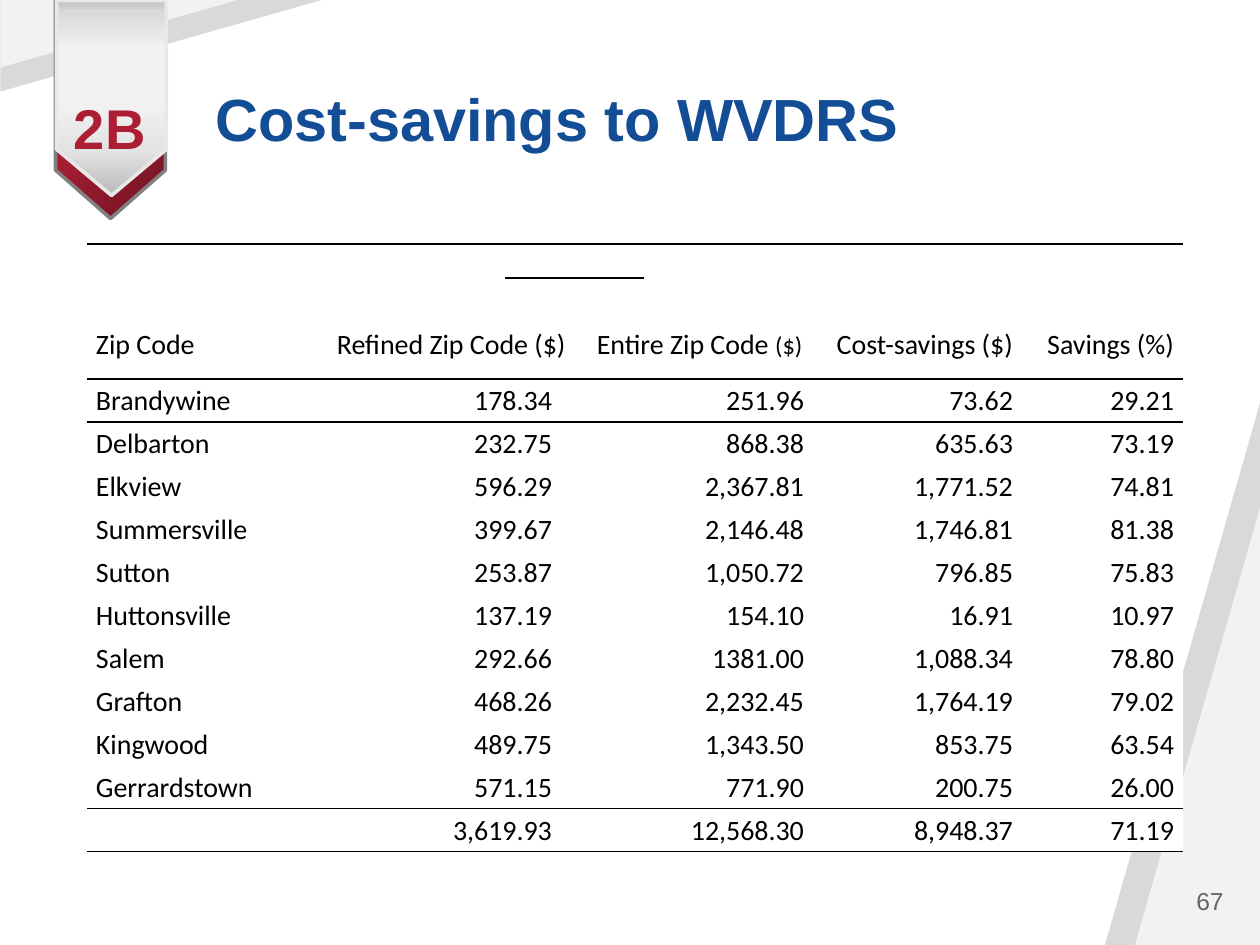
from lxml import etree
from pptx import Presentation
from pptx import util as u
from pptx.dml.color import RGBColor
from pptx.enum import shapes, text
from pptx.oxml import parse_xml
from pptx.oxml.ns import nsdecls, qn

PX = 914400 / 126
BLACK = RGBColor(0x00, 0x00, 0x00)
WHITE = RGBColor(0xFF, 0xFF, 0xFF)
SILVER = RGBColor(0xD9, 0xD9, 0xD9)
PALE = RGBColor(0xF2, 0xF2, 0xF2)
GRAY = RGBColor(0x80, 0x80, 0x80)
RIM = RGBColor(0xE8, 0xE8, 0xE8)
NUMBER_GRAY = RGBColor(0x64, 0x64, 0x64)
BLUE = RGBColor(0x12, 0x4D, 0x95)
RED = RGBColor(0xAC, 0x1E, 0x34)

RED_STOPS = [(0, "6A1320"), (48, "A61D33"), (100, "E25A6F")]
SILVER_STOPS = [(0, "BFBFBF"), (6, "D9D9D9"), (25, "F2F2F2"),
                (53, "F1F1F1"), (77, "E3E3E3"), (97, "BFBFBF")]
RADIAL = '<a:path path="circle"><a:fillToRect l="100000" t="100000"/></a:path>'
LINEAR = '<a:lin ang="0" scaled="0"/>'
PLAIN_TABLE = "{2D5ABB26-0587-4C30-8999-92F81FD0307C}"

COLUMNS = [238, 236, 252, 209, 161]
HEADER_HEIGHT, ROW_HEIGHT, CELL_INSET = 135, 43, 9
HEADERS = ["Zip Code", None, None, "Cost-savings ($)", "Savings (%)"]
ROWS = [
    ["Brandywine", "178.34", "251.96", "73.62", "29.21"],
    ["Delbarton", "232.75", "868.38", "635.63", "73.19"],
    ["Elkview", "596.29", "2,367.81", "1,771.52", "74.81"],
    ["Summersville", "399.67", "2,146.48", "1,746.81", "81.38"],
    ["Sutton", "253.87", "1,050.72", "796.85", "75.83"],
    ["Huttonsville", "137.19", "154.10", "16.91", "10.97"],
    ["Salem", "292.66", "1381.00", "1,088.34", "78.80"],
    ["Grafton", "468.26", "2,232.45", "1,764.19", "79.02"],
    ["Kingwood", "489.75", "1,343.50", "853.75", "63.54"],
    ["Gerrardstown", "571.15", "771.90", "200.75", "26.00"],
    [None, "3,619.93", "12,568.30", "8,948.37", "71.19"],
]


def px(*lengths):
    """Turn pixel lengths into EMU."""
    return [u.Emu(round(length * PX)) for length in lengths]


def add_wedge(page, place, color, turned=False):
    """Add a right-angled corner band, optionally turned to the top left."""
    wedge = page.shapes.add_shape(shapes.MSO_SHAPE.ISOSCELES_TRIANGLE, *px(*place))
    wedge.adjustments[0] = 1
    wedge.shadow.inherit = False
    wedge.fill.solid()
    wedge.fill.fore_color.rgb = color
    wedge.line.fill.background()
    if turned:
        wedge.rotation = 270
        wedge._element.spPr.find(qn("a:xfrm")).set("flipV", "1")


def add_ribbon(page, place, point, stops, direction, rim):
    """Add a downward ribbon with a gradient and a rim."""
    ribbon = page.shapes.add_shape(shapes.MSO_SHAPE.PENTAGON, *px(*place))
    ribbon.rotation = 90
    ribbon.adjustments[0] = point
    ribbon.shadow.inherit = False
    ribbon.line.color.rgb = rim
    ribbon.line.width = u.Pt(2)
    marks = "".join(f'<a:gs pos="{at * 1000}"><a:srgbClr val="{color}"/></a:gs>'
                    for at, color in stops)
    gradient = parse_xml(f'<a:gradFill {nsdecls("a")} rotWithShape="1">'
                         f'<a:gsLst>{marks}</a:gsLst>{direction}</a:gradFill>')
    ribbon._element.spPr.find(qn("a:prstGeom")).addnext(gradient)


def style(para, size, color, font="Arial", bold=False):
    """Set the font of a paragraph."""
    para.font.name = font
    para.font.size = u.Pt(size)
    para.font.bold = bold
    para.font.color.rgb = color


def add_label(page, place, words, size, color, align, bold=False, spacing=1):
    """Add a vertically centred text box and return it."""
    box = page.shapes.add_textbox(*px(*place))
    frame = box.text_frame
    frame.word_wrap = True
    frame.vertical_anchor = text.MSO_ANCHOR.MIDDLE
    para = frame.paragraphs[0]
    para.text = words
    para.alignment = align
    para.line_spacing = spacing
    style(para, size, color, bold=bold)
    return box


def add_badge(page):
    """Add the small-caps section number on the ribbon."""
    badge = add_label(page, (47, 73, 127, 111), "2b", 40, RED, text.PP_ALIGN.CENTER, True)
    badge.text_frame.margin_top, badge.text_frame.margin_bottom = px(0, 14)
    properties = badge.text_frame.paragraphs[0].runs[0]._r.get_or_add_rPr()
    properties.set("cap", "small")
    properties.set("spc", "40")


def rule_cell(cell, sides):
    """Draw black one-point borders on the named sides of a cell."""
    for index, side in enumerate(sides):
        border = parse_xml(f'<a:ln{side} {nsdecls("a")} w="12700"><a:solidFill>'
                           f'<a:srgbClr val="{BLACK}"/></a:solidFill></a:ln{side}>')
        cell._tc.get_or_add_tcPr().insert(index, border)


def fill_cell(cell, words, align):
    """Write one line into a table cell."""
    para = cell.text_frame.paragraphs[0]
    para.text = words
    para.alignment = align
    para.line_spacing = 1.15
    style(para, 16, BLACK, "Calibri")


def fill_joint_header(cell):
    """Write the two tabbed headings of the merged header cell."""
    cell.margin_left = px(12)[0]
    para = cell.text_frame.paragraphs[0]
    tabs = etree.SubElement(para._p.get_or_add_pPr(), qn("a:tabLst"))
    etree.SubElement(tabs, qn("a:tab"), pos=str(px(260)[0]), algn="l")
    fill_cell(cell, "Refined Zip Code ($)\tEntire Zip Code ", text.PP_ALIGN.LEFT)
    unit = para.add_run()
    unit.text = "($)"
    unit.font.size = u.Pt(14)


def add_savings_table(page):
    """Add the cost table with its header and total rows."""
    rows = [HEADERS] + ROWS
    height = HEADER_HEIGHT + ROW_HEIGHT * len(ROWS)
    frame = page.shapes.add_table(len(rows), len(COLUMNS), *px(87, 244, sum(COLUMNS), height))
    table = frame.table
    table.first_row = table.horz_banding = False
    table._tbl.tblPr.find(qn("a:tableStyleId")).text = PLAIN_TABLE
    for column, width in zip(table.columns, px(*COLUMNS)):
        column.width = width
    last = len(rows) - 1
    for r, values in enumerate(rows):
        table.rows[r].height = px(ROW_HEIGHT if r else HEADER_HEIGHT)[0]
        sides = ["T"] * (r in (0, 1, last)) + ["B"] * (r in (0, last - 1, last))
        for c, words in enumerate(values):
            cell = table.cell(r, c)
            cell.margin_left, cell.margin_right = px(CELL_INSET, CELL_INSET)
            cell.margin_top, cell.margin_bottom = px(0 if r else 79, 0)
            cell.fill.solid()
            cell.fill.fore_color.rgb = WHITE
            rule_cell(cell, sides)
            if words:
                fill_cell(cell, words, text.PP_ALIGN.RIGHT if c else text.PP_ALIGN.LEFT)
    table.cell(0, 1).merge(table.cell(0, 2))
    fill_joint_header(table.cell(0, 1))


def add_header_rule(page):
    """Add the short rule above the merged headings."""
    rule = page.shapes.add_connector(shapes.MSO_CONNECTOR.STRAIGHT, *px(505, 278, 644, 278))
    rule.line.color.rgb = BLACK
    rule.line.width = u.Pt(1.5)
    etree.SubElement(rule._element.spPr, qn("a:effectLst"))


def main():
    """Build and save the slide."""
    deck = Presentation()
    deck.slide_width, deck.slide_height = px(1260, 945)
    page = deck.slides.add_slide(deck.slide_layouts[6])
    add_wedge(page, (1105, 403, 155, 542), SILVER)
    add_wedge(page, (1135, 508, 125, 437), PALE)
    add_wedge(page, (116, -116, 92, 323), SILVER, turned=True)
    add_wedge(page, (86, -86, 68, 239), PALE, turned=True)
    add_ribbon(page, (1, 54, 219, 110), 0.44, RED_STOPS, RADIAL, GRAY)
    add_ribbon(page, (14, 43, 195, 110), 0.42, SILVER_STOPS, LINEAR, RIM)
    add_label(page, (203, 50, 980, 145), "Cost-savings to WVDRS", 34, BLUE,
              text.PP_ALIGN.LEFT, True, 0.9)
    add_label(page, (1060, 876, 176, 50), "67", 14, NUMBER_GRAY, text.PP_ALIGN.RIGHT)
    add_badge(page)
    add_savings_table(page)
    add_header_rule(page)
    deck.save("out.pptx")


if __name__ == "__main__":
    main()
